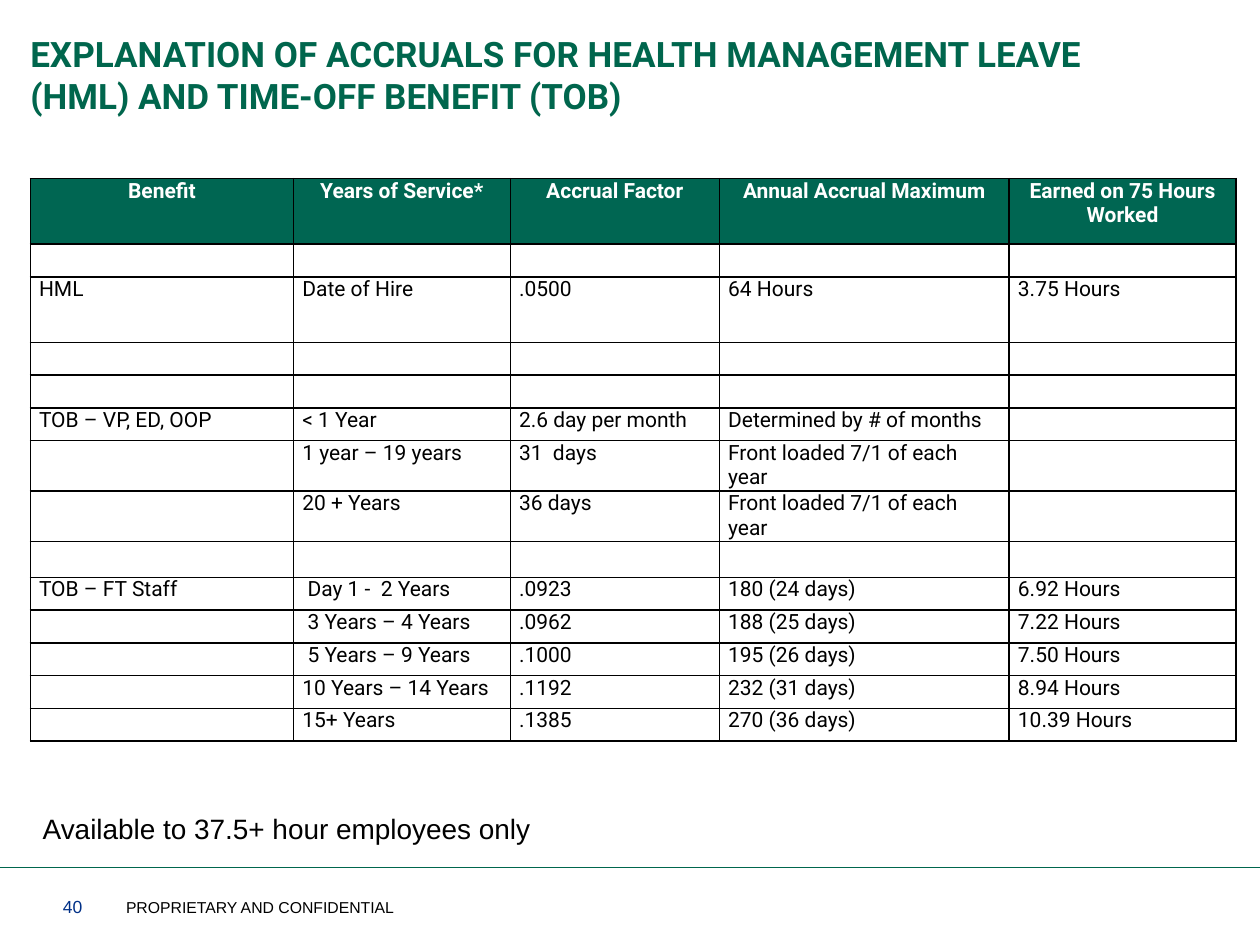
from dataclasses import dataclass

from lxml.etree import SubElement
from pptx import Presentation
from pptx.dml.color import RGBColor as Rgb
from pptx.enum.shapes import MSO_CONNECTOR as Connector
from pptx.enum.text import MSO_ANCHOR as Anchor, PP_ALIGN as Align
from pptx.oxml.ns import qn
from pptx.util import Emu, Inches, Pt

COLORS = {"title": "00664D", "header": "006652", "number": "003087", "ink": "000000", "paper": "FFFFFF"}
WIDTH, HEIGHT = Inches(10), Inches(7.5)
ROW_UNIT = Inches(0.26)
COLUMN_SHARES = (0.209, 0.172, 0.166, 0.23, 0.18)
ROW_UNITS = (2, 1, 2, 1, 1, 1, 1, 1, 1.1, 1, 1, 1, 1, 1)
EMPTY = ("",) * 5
ROWS = (
    ("Benefit", "Years of Service*", "Accrual Factor", "Annual Accrual Maximum", "Earned on 75 Hours Worked"),
    EMPTY,
    ("HML", "Date of Hire", ".0500", "64 Hours", "3.75 Hours"),
    EMPTY,
    EMPTY,
    ("TOB – VP, ED, OOP", "< 1 Year", "2.6 day per month", "Determined by # of months", ""),
    ("", "1 year – 19 years", "31  days", "Front loaded 7/1 of each year", ""),
    ("", "20 + Years", "36 days", "Front loaded 7/1 of each year", ""),
    EMPTY,
    ("TOB – FT Staff", " Day 1 -  2 Years", ".0923", "180 (24 days)", "6.92 Hours"),
    ("", " 3 Years – 4 Years", ".0962", "188 (25 days)", "7.22 Hours"),
    ("", " 5 Years – 9 Years", ".1000", "195 (26 days)", "7.50 Hours"),
    ("", "10 Years – 14 Years", ".1192", "232 (31 days)", "8.94 Hours"),
    ("", "15+ Years", ".1385", "270 (36 days)", "10.39 Hours"),
)


@dataclass(frozen=True)
class Style:
    """Look of a run of text."""
    size: float
    color: str = "ink"
    font: str = "Arial"
    bold: bool = False


@dataclass(frozen=True)
class Label:
    """Text box placed by shares of the slide's width and height."""
    text: str
    left: float
    top: float
    width: float
    height: float
    style: Style
    anchor: Anchor = Anchor.TOP
    inset: float = 0


LABELS = (
    Label("40", 0.05, 0.944, 0.054, 0.033, Style(10, "number"), Anchor.BOTTOM),
    Label("PROPRIETARY AND CONFIDENTIAL", 0.1, 0.944, 0.235, 0.033, Style(9), Anchor.BOTTOM),
    Label("EXPLANATION OF ACCRUALS FOR HEALTH MANAGEMENT LEAVE (HML) AND TIME-OFF BENEFIT (TOB)",
          0.024, 0.028, 0.892, 0.144, Style(20, "title", "Roboto", True)),
    Label("Available to 37.5+ hour employees\u00a0only", 0.024, 0.852, 0.409, 0.049, Style(16), inset=0.1),
)
HEADER_STYLE = Style(12, "paper", "Roboto", True)
BODY_STYLE = Style(12, "ink", "Roboto")


def rgb(name: str) -> Rgb:
    """Look up a named colour."""
    return Rgb.from_string(COLORS[name])


def across(share: float) -> Emu:
    """Turn a share of the slide's width into a length."""
    return Emu(round(WIDTH * share))


def down(share: float) -> Emu:
    """Turn a share of the slide's height into a length."""
    return Emu(round(HEIGHT * share))


def add_span(para, text: str, style: Style) -> None:
    """Append one styled run."""
    span = para.add_run()
    span.text = text
    span.font.name, span.font.size, span.font.bold = style.font, Pt(style.size), style.bold
    span.font.color.rgb = rgb(style.color)


def add_label(page, label: Label) -> None:
    """Draw one text box."""
    box = page.shapes.add_textbox(across(label.left), down(label.top), across(label.width), down(label.height))
    frame = box.text_frame
    frame.word_wrap = True
    frame.vertical_anchor = label.anchor
    frame.margin_left = frame.margin_right = Inches(label.inset)
    add_span(frame.paragraphs[0], label.text, label.style)


def add_rule(page, share: float) -> None:
    """Draw the full-width footer line."""
    rule = page.shapes.add_connector(Connector.STRAIGHT, 0, down(share), WIDTH, down(share))
    rule.line.color.rgb = rgb("title")
    rule.line.width = Pt(0.5)
    SubElement(rule.element.spPr, qn("a:effectLst"))


def add_borders(cell) -> None:
    """Outline a cell on all four sides."""
    properties = cell._tc.get_or_add_tcPr()
    for side in "LRTB":
        edge = SubElement(properties, qn(f"a:ln{side}"), w=str(Pt(1)))
        paint = SubElement(edge, qn("a:solidFill"))
        SubElement(paint, qn("a:srgbClr"), val=COLORS["ink"])


def fill_cell(cell, text: str, header: bool) -> None:
    """Format one cell and write its text."""
    cell.margin_left = cell.margin_right = Inches(0.07)
    cell.margin_top = cell.margin_bottom = 0
    add_borders(cell)
    para = cell.text_frame.paragraphs[0]
    style = HEADER_STYLE if header else BODY_STYLE
    if header:
        cell.fill.solid()
        cell.fill.fore_color.rgb = rgb("header")
        para.alignment = Align.CENTER
    else:
        cell.fill.background()
    if text:
        add_span(para, text, style)
    else:
        SubElement(para._p, qn("a:endParaRPr"), sz=str(style.size * 100))


def add_accruals(page) -> None:
    """Draw the accrual table."""
    size = across(sum(COLUMN_SHARES)), Emu(round(ROW_UNIT * sum(ROW_UNITS)))
    frame = page.shapes.add_table(len(ROWS), len(COLUMN_SHARES), across(0.024), down(0.189), *size)
    table = frame.table
    table.first_row = table.horz_banding = False
    for column, share in zip(table.columns, COLUMN_SHARES):
        column.width = across(share)
    for index, (row, units, texts) in enumerate(zip(table.rows, ROW_UNITS, ROWS)):
        row.height = Emu(round(ROW_UNIT * units))
        for cell, text in zip(row.cells, texts):
            fill_cell(cell, text, header=index == 0)


def main() -> None:
    """Build the slide and save it."""
    deck = Presentation()
    deck.slide_width, deck.slide_height = WIDTH, HEIGHT
    page = deck.slides.add_slide(deck.slide_layouts[6])
    add_rule(page, 0.918)
    for label in LABELS:
        add_label(page, label)
    add_accruals(page)
    deck.save("out.pptx")


if __name__ == "__main__":
    main()
